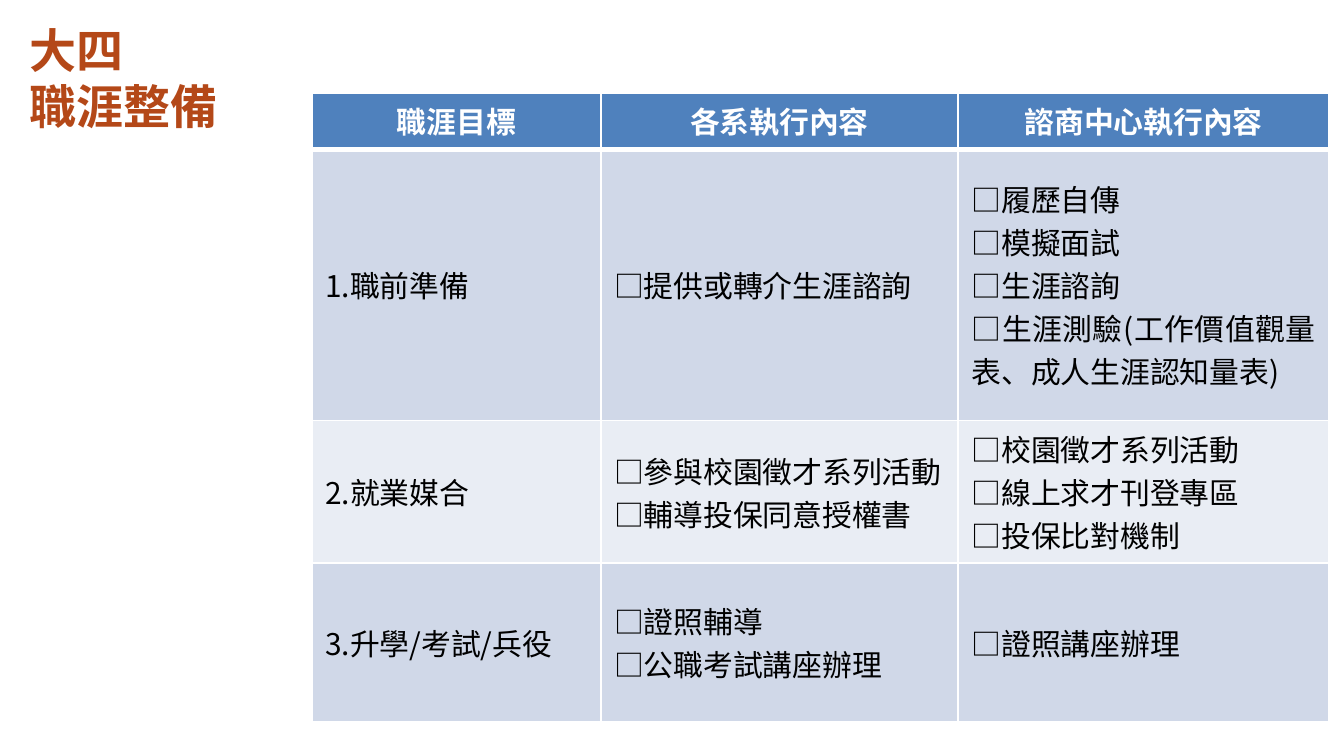
from dataclasses import dataclass

from lxml import etree
from pptx import Presentation
from pptx.dml.color import RGBColor
from pptx.enum import text as enum
from pptx.oxml import ns
from pptx.util import Inches, Pt


@dataclass(frozen=True)
class Theme:
    font: str = "Noto Sans CJK SC"
    title: str = "B44818"
    head: str = "4F81BD"
    odd: str = "D0D8E8"
    even: str = "E9EDF4"
    white: str = "FFFFFF"
    black: str = "000000"
    big: float = 25.2
    body: float = 16


@dataclass(frozen=True)
class Row:
    height: float
    cells: tuple[str, ...]  # one line of text per paragraph


T = Theme()
WIDE = 10
COLS = (2.15, 2.66, 2.76)
ROWS = (
    Row(0.42, ("職涯目標", "各系執行內容", "諮商中心執行內容")),
    Row(2.02, ("1.職前準備", "□提供或轉介生涯諮詢",
               "□履歷自傳\n□模擬面試\n□生涯諮詢\n"
               "□生涯測驗(工作價值觀量表、成人生涯認知量表)")),
    Row(1.06, ("2.就業媒合", "□參與校園徵才系列活動\n□輔導投保同意授權書",
               "□校園徵才系列活動\n□線上求才刊登專區\n□投保比對機制")),
    Row(1.18, ("3.升學/考試/兵役", "□證照輔導\n□公職考試講座辦理",
               "□證照講座辦理")),
)


def write(frame, words: str, size: float, color: str, bold: bool,
          align) -> None:
    """Fill a text frame and style every paragraph alike."""
    frame.text = words
    looks = {"name": T.font, "size": Pt(size), "bold": bold}
    for para in frame.paragraphs:
        para.alignment = align
        for run in para.runs:
            for key, value in looks.items():
                setattr(run.font, key, value)
            run.font.color.rgb = RGBColor.from_string(color)
            # East Asian glyphs take their own font element
            props = run._r.get_or_add_rPr()
            etree.SubElement(props, ns.qn("a:ea"), typeface=T.font)


def edge(cell, widths: dict[str, float]) -> None:
    """Draw white cell borders; they must precede the fill."""
    props = cell._tc.get_or_add_tcPr()
    for spot, (side, width) in enumerate(widths.items()):
        line = etree.Element(ns.qn(f"a:ln{side}"), w=str(Pt(width)))
        fill = etree.SubElement(line, ns.qn("a:solidFill"))
        etree.SubElement(fill, ns.qn("a:srgbClr"), val=T.white)
        props.insert(spot, line)


def draw_title(slide) -> None:
    box = slide.shapes.add_textbox(
        Inches(0.12), Inches(0.11), Inches(2.2), Inches(0.94))
    frame = box.text_frame
    frame.word_wrap = True
    frame.vertical_anchor = enum.MSO_ANCHOR.MIDDLE
    # A vertical tab breaks the line inside one paragraph
    write(frame, "大四\v職涯整備", T.big, T.title, True, enum.PP_ALIGN.LEFT)


def draw_table(slide) -> None:
    tall = sum(row.height for row in ROWS)
    table = slide.shapes.add_table(
        len(ROWS), len(COLS), Inches(2.32), Inches(0.69),
        Inches(sum(COLS)), Inches(tall)).table
    for col, width in zip(table.columns, COLS):
        col.width = Inches(width)

    for i, row in enumerate(ROWS):
        table.rows[i].height = Inches(row.height)
        head = i == 0
        fill = T.head if head else (T.odd if i % 2 else T.even)
        ink = T.white if head else T.black
        align = enum.PP_ALIGN.CENTER if head else enum.PP_ALIGN.JUSTIFY
        sides = {"L": 1, "R": 1, "T": 3 if i == 1 else 1, "B": 3 if head else 1}
        for j, words in enumerate(row.cells):
            cell = table.cell(i, j)
            cell.vertical_anchor = enum.MSO_ANCHOR.MIDDLE
            cell.fill.solid()
            cell.fill.fore_color.rgb = RGBColor.from_string(fill)
            edge(cell, sides)
            write(cell.text_frame, words, T.body, ink, head, align)


def main() -> None:
    deck = Presentation()
    # Widescreen, 16 to 9
    deck.slide_width, deck.slide_height = Inches(WIDE), Inches(WIDE * 9 / 16)
    slide = deck.slides.add_slide(deck.slide_layouts[6])
    draw_title(slide)
    draw_table(slide)
    deck.save("out.pptx")


if __name__ == "__main__":
    main()
